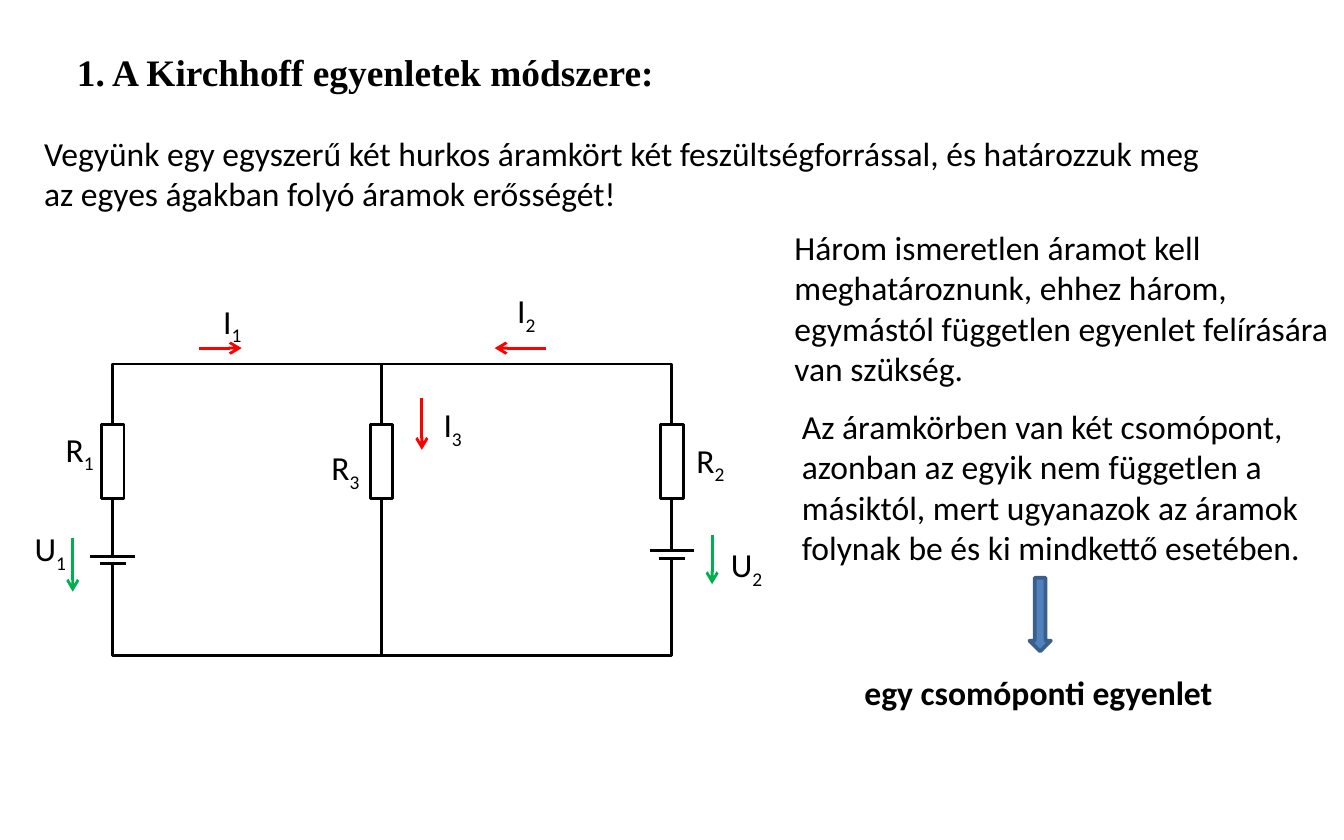
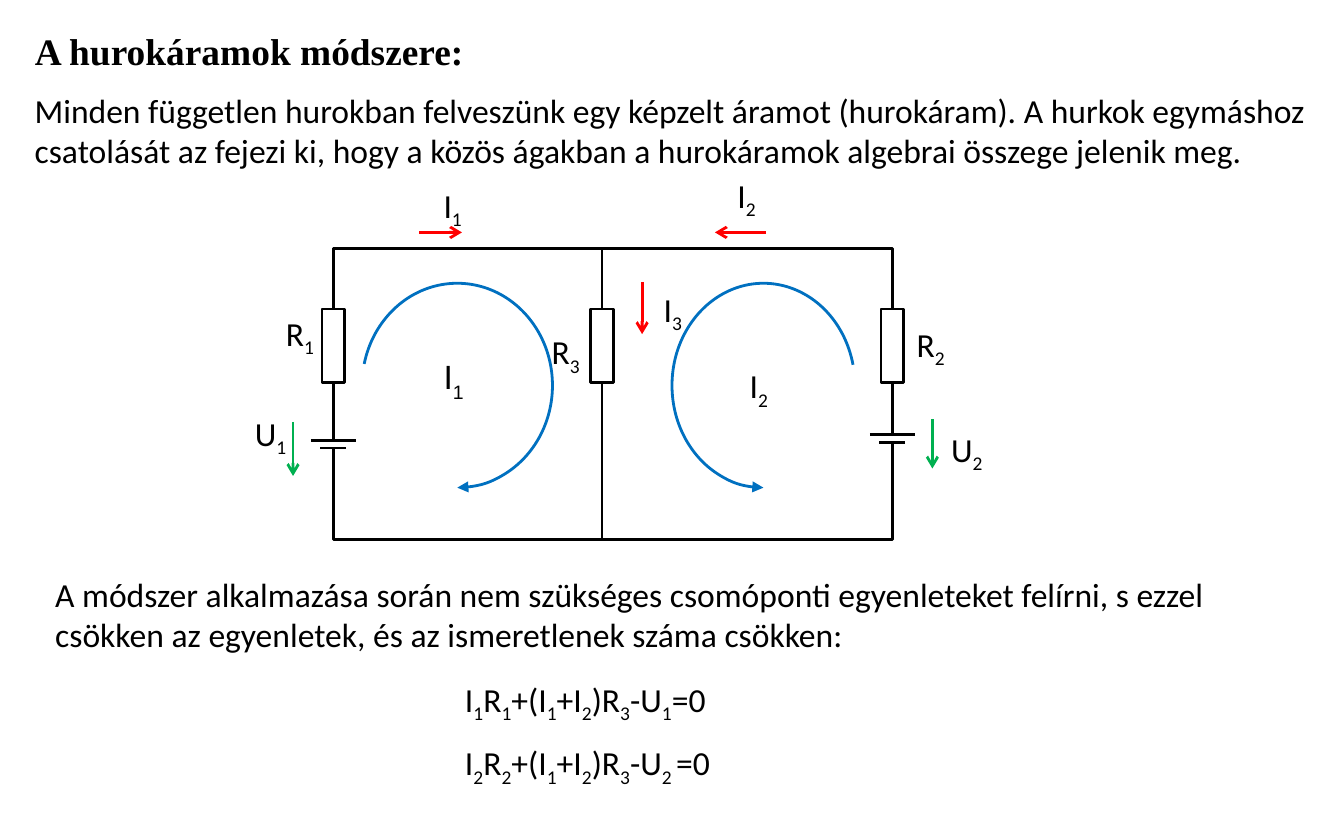
from lxml.etree import SubElement
from pptx import Presentation
from pptx.dml.color import RGBColor
from pptx.enum.shapes import MSO_CONNECTOR, MSO_SHAPE
from pptx.enum.text import MSO_ANCHOR as ANCHOR, MSO_AUTO_SIZE as FIT, PP_ALIGN as ALIGN
from pptx.oxml.ns import qn
from pptx.util import Pt

COLORS = {
    "ink": "000000",
    "paper": "FFFFFF",
    "current": "FF0000",
    "voltage": "00B050",
    "loop": "0070C0",
    "arrow": "4F81BD",
    "arrow_edge": "3A5F8C",
}
BODY_FONT, TITLE_FONT = "Calibri", "Times New Roman"
LEFT_X, MIDDLE_X, RIGHT_X = 60.5, 204.5, 360
TOP_Y, BOTTOM_Y = 195, 351
LABELS = [
    ("I_1", 112.5, 157.5, 51, 24.5),
    ("R_1", 28, 226, 34, 39),
    ("U_1", 11.5, 279.5, 35.5, 36),
    ("R_3", 170.5, 236, 35.5, 35.5),
    ("I_3", 230.5, 213, 40.5, 35.5),
    ("R_2", 366, 232, 41, 37),
    ("U_2", 384.5, 288, 44, 39.5),
]
ARROWS = [
    ("current", 106.5, 186.5, 129.5, 186.5),
    ("current", 292.5, 186.5, 265, 186.5),
    ("current", 226, 213, 226, 241),
    ("voltage", 39, 288, 39, 317),
    ("voltage", 381.5, 286.5, 381.5, 313),
]


def rgb(name):
    return RGBColor.from_string(COLORS[name])


def add_runs(p, text, size=18, font=BODY_FONT, bold=False, drop=-25):
    for i, part in enumerate(text.split("_")):
        if not part:
            continue
        r = p.add_run()
        r.text = part
        r.font.size, r.font.name, r.font.bold = Pt(size), font, bold
        r.font.color.rgb = rgb("ink")
        if i % 2:
            r._r.get_or_add_rPr().set("baseline", str(drop * 1000))


def add_title(slide, text, x, y, w, h):
    sp = slide.shapes.title
    sp.left, sp.top, sp.width, sp.height = Pt(x), Pt(y), Pt(w), Pt(h)
    tf = sp.text_frame
    tf.word_wrap, tf.auto_size = False, FIT.SHAPE_TO_FIT_TEXT
    tf.vertical_anchor = ANCHOR.MIDDLE
    p = tf.paragraphs[0]
    p.alignment = ALIGN.LEFT
    add_runs(p, text, 20, TITLE_FONT, True)


def add_text(shapes, text, x, y, w, h, wrap=True, fit=FIT.SHAPE_TO_FIT_TEXT,
             anchor=ANCHOR.TOP, after=0, **style):
    sp = shapes.add_textbox(Pt(x), Pt(y), Pt(w), Pt(h))
    tf = sp.text_frame
    tf.word_wrap, tf.auto_size, tf.vertical_anchor = wrap, fit, anchor
    p = tf.paragraphs[0]
    p.space_after = Pt(after)
    add_runs(p, text, **style)
    return sp


def add_label(shapes, text, x, y, w, h):
    return add_text(shapes, text, x, y, w, h, fit=FIT.NONE, after=10)


def add_box(shapes, kind, x, y, w, h, fill="paper", line="ink", width=1.5):
    sp = shapes.add_shape(kind, Pt(x), Pt(y), Pt(w), Pt(h))
    sp.shadow.inherit = False
    if fill:
        sp.fill.solid()
        sp.fill.fore_color.rgb = rgb(fill)
    else:
        sp.fill.background()
    sp.line.color.rgb = rgb(line)
    sp.line.width = Pt(width)
    return sp


def add_arrowhead(sp, end, kind):
    SubElement(sp.line._get_or_add_ln(), qn(f"a:{end}")).set("type", kind)


def add_line(shapes, x1, y1, x2, y2, color="ink"):
    c = shapes.add_connector(MSO_CONNECTOR.STRAIGHT, Pt(x1), Pt(y1), Pt(x2), Pt(y2))
    c.line.color.rgb = rgb(color)
    c.line.width = Pt(1.5)
    SubElement(c._element.spPr, qn("a:effectLst"))
    return c


def add_resistor(shapes, x):
    add_box(shapes, MSO_SHAPE.RECTANGLE, x - 6, 227.5, 12, 39.5)


def add_battery(shapes, x, y):
    add_box(shapes, MSO_SHAPE.RECTANGLE, x - 5.75, y + 0.5, 11.5, 3, line="paper", width=0.75)
    for half, dy in ((7, 4), (12, 0)):
        add_line(shapes, x - half, y + dy, x + half, y + dy)


def add_circuit(slide, dx=0, dy=0):
    group = slide.shapes.add_group_shape()
    shapes = group.shapes
    add_box(shapes, MSO_SHAPE.RECTANGLE, LEFT_X, TOP_Y, RIGHT_X - LEFT_X, BOTTOM_Y - TOP_Y)
    add_line(shapes, MIDDLE_X, TOP_Y, MIDDLE_X, BOTTOM_Y)
    for x in (LEFT_X, MIDDLE_X, RIGHT_X):
        add_resistor(shapes, x)
    add_battery(shapes, LEFT_X, 298)
    add_battery(shapes, RIGHT_X, 295)
    for label in LABELS:
        add_label(shapes, *label)
    i2 = add_label(shapes, "I_2", 270, 152, 49.5, 24)
    i2.fill.solid()
    i2.fill.fore_color.rgb = rgb("paper")
    for color, *ends in ARROWS:
        add_arrowhead(add_line(shapes, *ends, color), "tailEnd", "arrow")
    group.left += Pt(dx)
    group.top += Pt(dy)


def add_loop(slide, cx, rx, start, stop, end):
    cy, ry = 206.5, 54.75
    sp = add_box(slide.shapes, MSO_SHAPE.ARC, cx - rx, cy - ry, 2 * rx, 2 * ry, None, "loop")
    for i, degrees in enumerate((start, stop)):
        sp.adjustments[i] = degrees * 0.6
    add_arrowhead(sp, end, "triangle")


def build_kirchhoff(slide):
    add_title(slide, "1. A Kirchhoff egyenletek módszere:", 34, 22.5, 326, 31.5)
    shapes = slide.shapes
    add_text(shapes, "Vegyünk egy egyszerű két hurkos áramkört két feszültségforrással, és "
             "határozzuk meg az egyes ágakban folyó áramok erősségét!", 16.5, 67.5, 652.5, 51)
    add_circuit(slide)
    add_text(shapes, "Három ismeretlen áramot kell meghatároznunk, ehhez három, egymástól "
             "független egyenlet felírására van szükség.", 418.5, 118, 314.5, 94.5)
    add_text(shapes, "Az áramkörben van két csomópont, azonban az egyik nem független a "
             "másiktól, mert ugyanazok az áramok folynak be és ki mindkettő esetében.",
             422.5, 214, 309.5, 94.5)
    add_box(shapes, MSO_SHAPE.DOWN_ARROW, 551.5, 309.5, 11.5, 39.5, "arrow", "arrow_edge", 2)
    add_text(shapes, "egy csomóponti egyenlet", 456, 356.5, 202, 29, wrap=False, bold=True)


def build_loop_currents(slide):
    add_title(slide, "A hurokáramok módszere:", 11.5, 11.5, 246, 31.5)
    shapes = slide.shapes
    add_text(shapes, "Minden független hurokban felveszünk egy képzelt áramot (hurokáram). A "
             "hurkok egymáshoz csatolását az fejezi ki, hogy a közös ágakban a hurokáramok "
             "algebrai összege jelenik meg.", 11.5, 44.5, 697.5, 51)
    add_text(shapes, "A módszer alkalmazása során nem szükséges csomóponti egyenleteket "
             "felírni, s ezzel csökken az egyenletek, és az ismeretlenek száma csökken:",
             22.5, 304, 669.5, 51)
    add_text(shapes, "I_1_R_1_+(I_1_+I_2_)R_3_-U_1_=0", 242, 360, 150, 29, wrap=False)
    add_text(shapes, "I_2_R_2_+(I_1_+I_2_)R_3_-U_2 _=0", 242, 394, 152.5, 29, wrap=False)
    add_circuit(slide, 118, -62)
    add_loop(slide, 245, 51, 193, 90, "tailEnd")
    add_loop(slide, 409, 49, 90, 347, "headEnd")
    add_text(shapes, "I_1", 230.5, 173.5, 34, 46, fit=FIT.NONE, anchor=ANCHOR.BOTTOM,
             font="Arial", drop=-30)
    add_text(shapes, "I_2", 394.5, 192, 25, 29, wrap=False)


def main():
    prs = Presentation()
    prs.slide_width, prs.slide_height = Pt(720), Pt(450)
    for build in (build_kirchhoff, build_loop_currents):
        build(prs.slides.add_slide(prs.slide_layouts[5]))
    prs.save("out.pptx")


if __name__ == "__main__":
    main()
